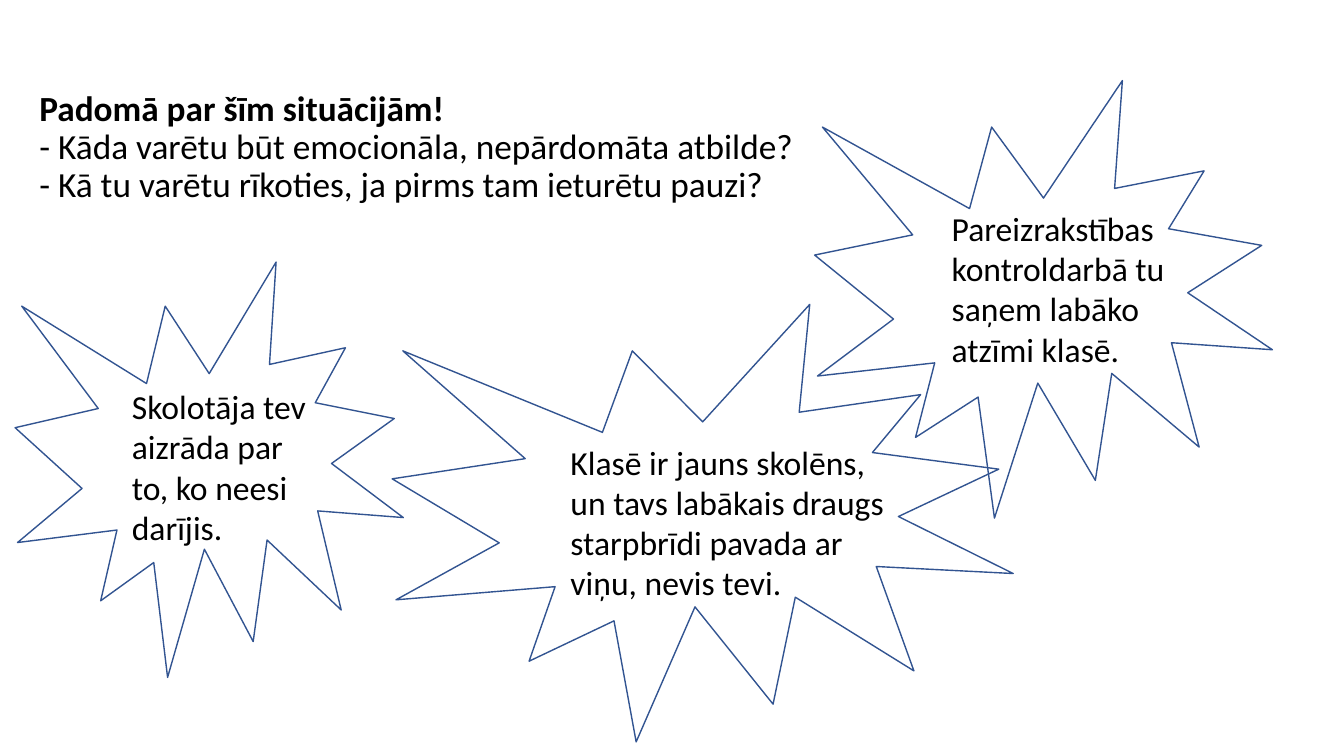
"""Builds a slide with three classroom situations to think about."""
import pptx
import pptx.dml.color
import pptx.enum.shapes
import pptx.enum.text
import pptx.util

Inches = pptx.util.Inches
Pt = pptx.util.Pt

HEADING = "Padomā par šīm situācijām!"
QUESTIONS = [
    "- Kāda varētu būt emocionāla, nepārdomāta atbilde?",
    "- Kā tu varētu rīkoties, ja pirms tam ieturētu pauzi?",
]
SITUATIONS = [
    ("Skolotāja tev aizrāda par to, ko neesi darījis.",
     (0.15, 2.6, 3.85, 4.12), (1.21, 3.78, 1.96, 1.72)),
    ("Pareizrakstības kontroldarbā tu saņem labāko atzīmi klasē.",
     (8.08, 0.8, 4.54, 4.34), (9.34, 2.01, 2.52, 1.72)),
    ("Klasē ir jauns skolēns, un tavs labākais draugs starpbrīdi pavada ar viņu, nevis tevi.",
     (3.89, 3.02, 6.16, 4.34), (5.56, 4.33, 3.38, 1.72)),
]


def color(value):
    """Return the colour for a hex string."""
    return pptx.dml.color.RGBColor.from_string(value)


def place(lengths):
    """Convert left, top, width and height to inches."""
    return [Inches(length) for length in lengths]


def style_font(para, size):
    """Set the common font on a paragraph."""
    para.font.name = "Calibri"
    para.font.size = Pt(size)
    para.font.color.rgb = color("000000")


def fill_title(title):
    """Place the title and write the heading with its questions."""
    title.left, title.top, title.width, title.height = place((0.29, 0.71, 8.42, 1.76))
    frame = title.text_frame
    frame.word_wrap = True
    frame.auto_size = pptx.enum.text.MSO_AUTO_SIZE.NONE
    frame.vertical_anchor = pptx.enum.text.MSO_ANCHOR.BOTTOM
    frame.margin_bottom = Inches(0.43)
    para = frame.paragraphs[0]
    para.alignment = pptx.enum.text.PP_ALIGN.LEFT
    para.line_spacing = 0.9
    style_font(para, 25.2)
    heading = para.add_run()
    heading.text = HEADING
    heading.font.bold = True
    for question in QUESTIONS:
        para.add_line_break()
        span = para.add_run()
        span.text = question
        span.font.bold = False


def add_burst(slide, lengths):
    """Add an unfilled burst outline."""
    burst = slide.shapes.add_shape(
        pptx.enum.shapes.MSO_SHAPE.EXPLOSION1, *place(lengths))
    burst.shadow.inherit = False
    burst.fill.background()
    burst.line.color.rgb = color("325491")
    burst.line.width = Pt(1)


def add_situation(slide, text, lengths):
    """Add a text box that describes a situation."""
    frame = slide.shapes.add_textbox(*place(lengths)).text_frame
    frame.word_wrap = True
    frame.auto_size = pptx.enum.text.MSO_AUTO_SIZE.SHAPE_TO_FIT_TEXT
    para = frame.paragraphs[0]
    para.text = text
    style_font(para, 24)


def main():
    """Build and save the deck."""
    deck = pptx.Presentation()
    deck.slide_width = Inches(13.33)
    deck.slide_height = Inches(7.5)
    slide = deck.slides.add_slide(deck.slide_layouts[0])
    subtitle = slide.placeholders[1].element
    subtitle.getparent().remove(subtitle)
    fill_title(slide.shapes.title)
    for text, burst_place, text_place in SITUATIONS:
        add_burst(slide, burst_place)
        add_situation(slide, text, text_place)
    deck.save("out.pptx")


if __name__ == "__main__":
    main()
